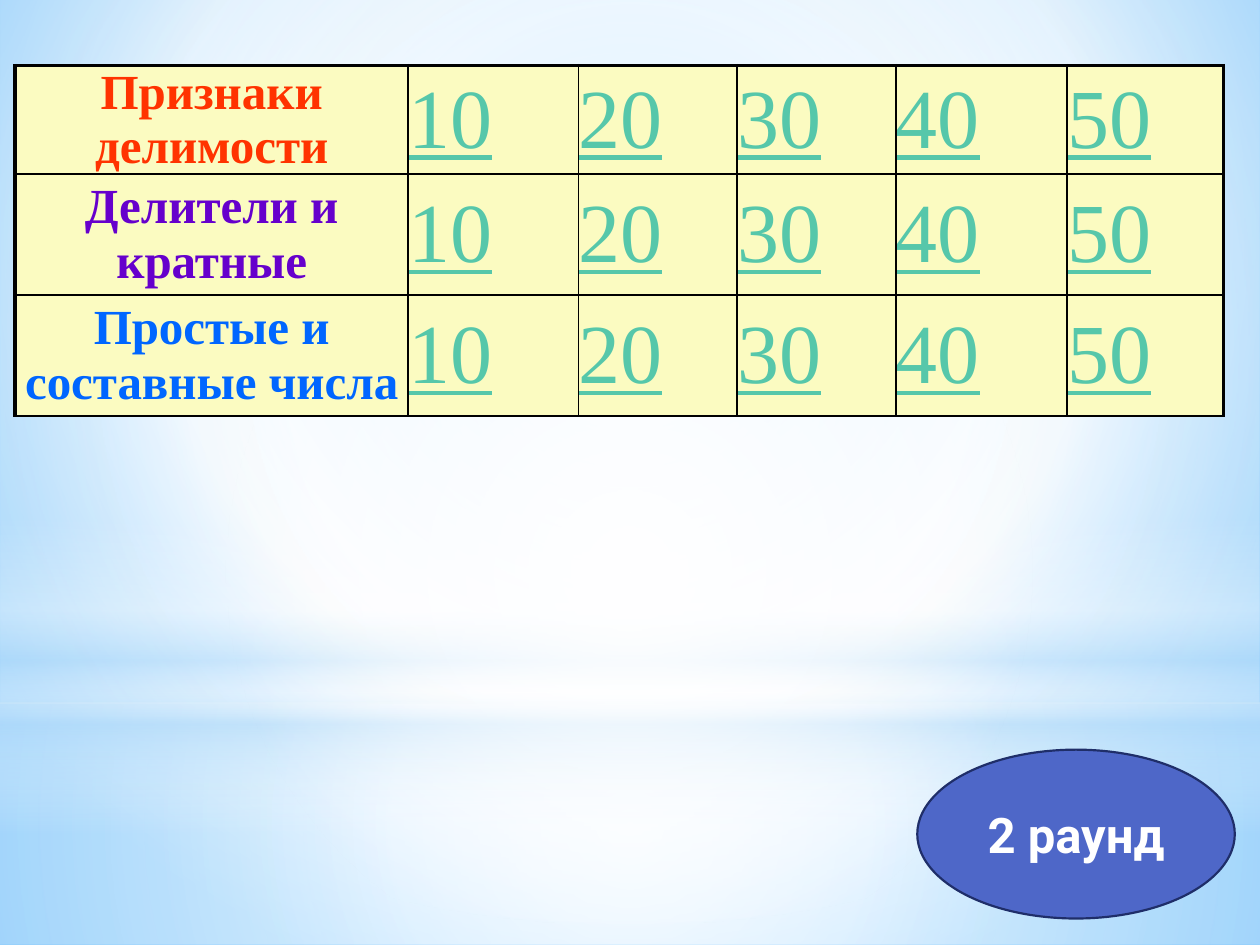
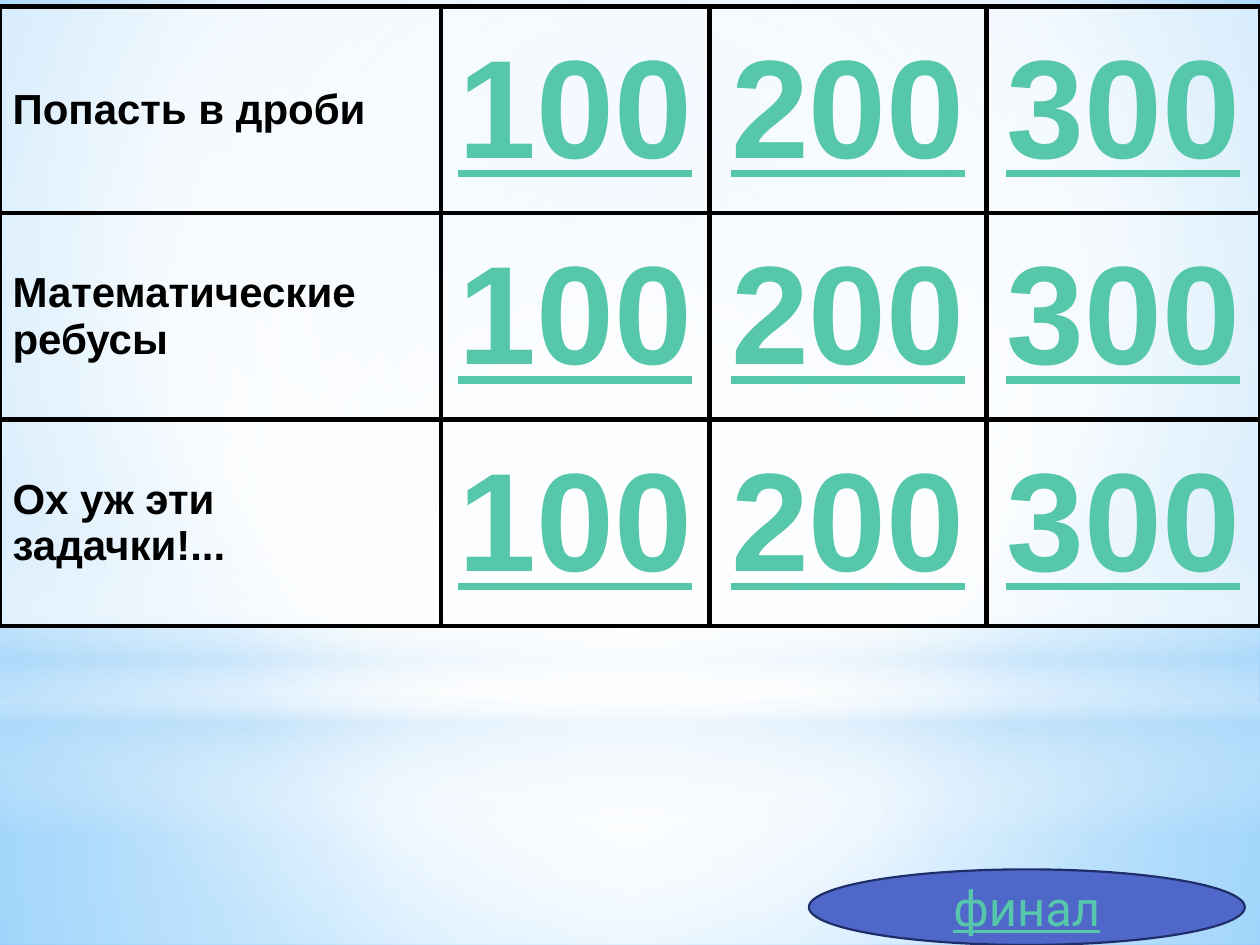
"""Build two quiz score boards on a soft blue background."""
from lxml.etree import SubElement
from pptx import Presentation
from pptx.dml.color import RGBColor
from pptx.enum.shapes import MSO_SHAPE
from pptx.enum.text import MSO_ANCHOR, PP_ALIGN
from pptx.oxml import parse_xml
from pptx.oxml.ns import nsdecls, qn
from pptx.util import Inches, Pt

C = {
    "sky": "9ED5FF", "blue": "5BB9FF", "mist": "B4DCFA", "white": "FFFFFF",
    "black": "000000", "cream": "FBFBC1", "link": "56C7AA", "red": "FF3300",
    "purple": "6600CC", "azure": "0066FF", "button": "4E67C8", "edge": "1F2E69",
}
CENTER = (50, 50, 50, 50)


def set_gradient(element, stops, to):
    grad = element.find(".//" + qn("a:gradFill"))
    stop_xml = "".join(
        f'<a:gs pos="{pos * 1000}"><a:srgbClr val="{C[color]}">'
        f'<a:alpha val="{alpha * 1000}"/></a:srgbClr></a:gs>'
        for pos, color, alpha in stops)
    if to:
        l, t, r, b = (v * 1000 for v in to)
        way = f'<a:path path="circle"><a:fillToRect l="{l}" t="{t}" r="{r}" b="{b}"/></a:path>'
    else:
        way = '<a:lin ang="5400000" scaled="0"/>'
    grad.getparent().replace(grad, parse_xml(
        f'<a:gradFill {nsdecls("a")} rotWithShape="1"><a:gsLst>{stop_xml}</a:gsLst>{way}</a:gradFill>'))


def style_text(p, font, size, color, bold, underline, align):
    p.alignment = align
    f = p.runs[0].font
    f.name, f.size, f.bold, f.underline = font, Pt(size), bold, underline
    f.color.rgb = RGBColor.from_string(C[color])


bands = [
    (MSO_SHAPE.RECTANGLE, 5.58, 1.92,
     [(0, "white", 91), (37, "white", 76), (100, "mist", 79)], CENTER),
    (MSO_SHAPE.RECTANGLE, 0, 5.58,
     [(0, "white", 89), (48, "white", 62), (100, "mist", 79)], CENTER),
    (MSO_SHAPE.RECTANGLE, 4.12, 2.5,
     [(0, "white", 0), (29, "white", 30), (45, "mist", 40),
      (55, "white", 26), (65, "mist", 60), (100, "white", 0)], None),
    (MSO_SHAPE.OVAL, 1.75, 5.58, [(0, "white", 100), (56, "white", 0)], CENTER),
]

boards = [
    dict(at=(0.12, 0.52), cols=[3.12, 1.35, 1.26, 1.26, 1.36, 1.24], rows=[0.86, 0.96, 0.96],
         topics=[("Признаки делимости", "red"), ("Делители и кратные", "purple"),
                 ("Простые и составные числа", "azure")],
         scores=["10", "20", "30", "40", "50"], font="Times New Roman",
         topic_size=28, score_size=48, score_bold=False,
         topic_align=PP_ALIGN.CENTER, score_align=PP_ALIGN.LEFT,
         inset=(0, 0), fill="cream", alpha=100, inner=1, outer=2.25, bottom=1,
         button=("2 раунд", 7.28, 5.95, 2.52, 1.34, "white", True, False)),
    dict(at=(0, 0.05), cols=[3.5, 2.13, 2.2, 2.17], rows=[1.64] * 3,
         topics=[("Попасть в дроби", "black"), ("Математические ребусы", "black"),
                 ("Ох уж эти задачки!...", "black")],
         scores=["100", "200", "300"], font="Arial",
         topic_size=24, score_size=80, score_bold=True,
         topic_align=PP_ALIGN.LEFT, score_align=PP_ALIGN.CENTER,
         inset=(0.1, 0.05), fill="white", alpha=50, inner=3, outer=3, bottom=3,
         button=("финал", 6.42, 6.9, 3.46, 0.6, "link", False, True)),
]

prs = Presentation()
prs.slide_width, prs.slide_height = Inches(10), Inches(7.5)
master = prs.slide_master
master.background.fill.gradient()
set_gradient(master._element, [(0, "sky", 100), (60, "white", 100), (100, "blue", 100)],
             (20, 10, 20, 60))

for board in boards:
    s = prs.slides.add_slide(prs.slide_layouts[6])
    for shape, top, height, stops, to in bands:
        sp = s.shapes.add_shape(shape, 0, Inches(top), Inches(10), Inches(height))
        sp.shadow.inherit = False
        sp.line.fill.background()
        sp.fill.gradient()
        set_gradient(sp._element, stops, to)

    cols, rows = board["cols"], board["rows"]
    left, top = board["at"]
    table = s.shapes.add_table(len(rows), len(cols), Inches(left), Inches(top),
                               Inches(sum(cols)), Inches(sum(rows))).table
    table.first_row = table.horz_banding = False
    for column, width in zip(table.columns, cols):
        column.width = Inches(width)
    for i, (topic, color) in enumerate(board["topics"]):
        table.rows[i].height = Inches(rows[i])
        for j, text in enumerate([topic] + board["scores"]):
            cell = table.cell(i, j)
            cell.vertical_anchor = MSO_ANCHOR.MIDDLE
            side, edge = board["inset"]
            cell.margin_left = cell.margin_right = Inches(side)
            cell.margin_top = cell.margin_bottom = Inches(edge)
            p = cell.text_frame.paragraphs[0]
            p.text = text
            if j == 0:
                style_text(p, board["font"], board["topic_size"], color, True, False,
                           board["topic_align"])
            else:
                style_text(p, board["font"], board["score_size"], "link",
                           board["score_bold"], True, board["score_align"])
            before = SubElement(p._p.get_or_add_pPr(), qn("a:spcBef"))
            SubElement(before, qn("a:spcPct")).set("val", "20000")

            cell.fill.solid()
            cell.fill.fore_color.rgb = RGBColor.from_string(C[board["fill"]])
            tc_pr = cell._tc.get_or_add_tcPr()
            rgb = tc_pr.find(".//" + qn("a:srgbClr"))
            SubElement(rgb, qn("a:alpha")).set("val", str(board["alpha"] * 1000))
            inner, outer = board["inner"], board["outer"]
            borders = [("L", outer if j == 0 else inner),
                       ("R", outer if j == len(cols) - 1 else inner),
                       ("T", outer if i == 0 else inner),
                       ("B", board["bottom"] if i == len(rows) - 1 else inner)]
            for k, (name, width) in enumerate(borders):
                tc_pr.insert(k, parse_xml(
                    f'<a:ln{name} {nsdecls("a")} w="{Pt(width)}"><a:solidFill>'
                    f'<a:srgbClr val="{C["black"]}"/></a:solidFill></a:ln{name}>'))

    text, left, top, width, height, color, bold, underline = board["button"]
    sp = s.shapes.add_shape(MSO_SHAPE.OVAL, Inches(left), Inches(top),
                            Inches(width), Inches(height))
    sp.shadow.inherit = False
    sp.fill.solid()
    sp.fill.fore_color.rgb = RGBColor.from_string(C["button"])
    sp.line.color.rgb = RGBColor.from_string(C["edge"])
    sp.line.width = Pt(1.25)
    tf = sp.text_frame
    tf.word_wrap = True
    tf.vertical_anchor = MSO_ANCHOR.MIDDLE
    tf.text = text
    style_text(tf.paragraphs[0], "Roboto", 28, color, bold, underline, PP_ALIGN.CENTER)

prs.save("out.pptx")
